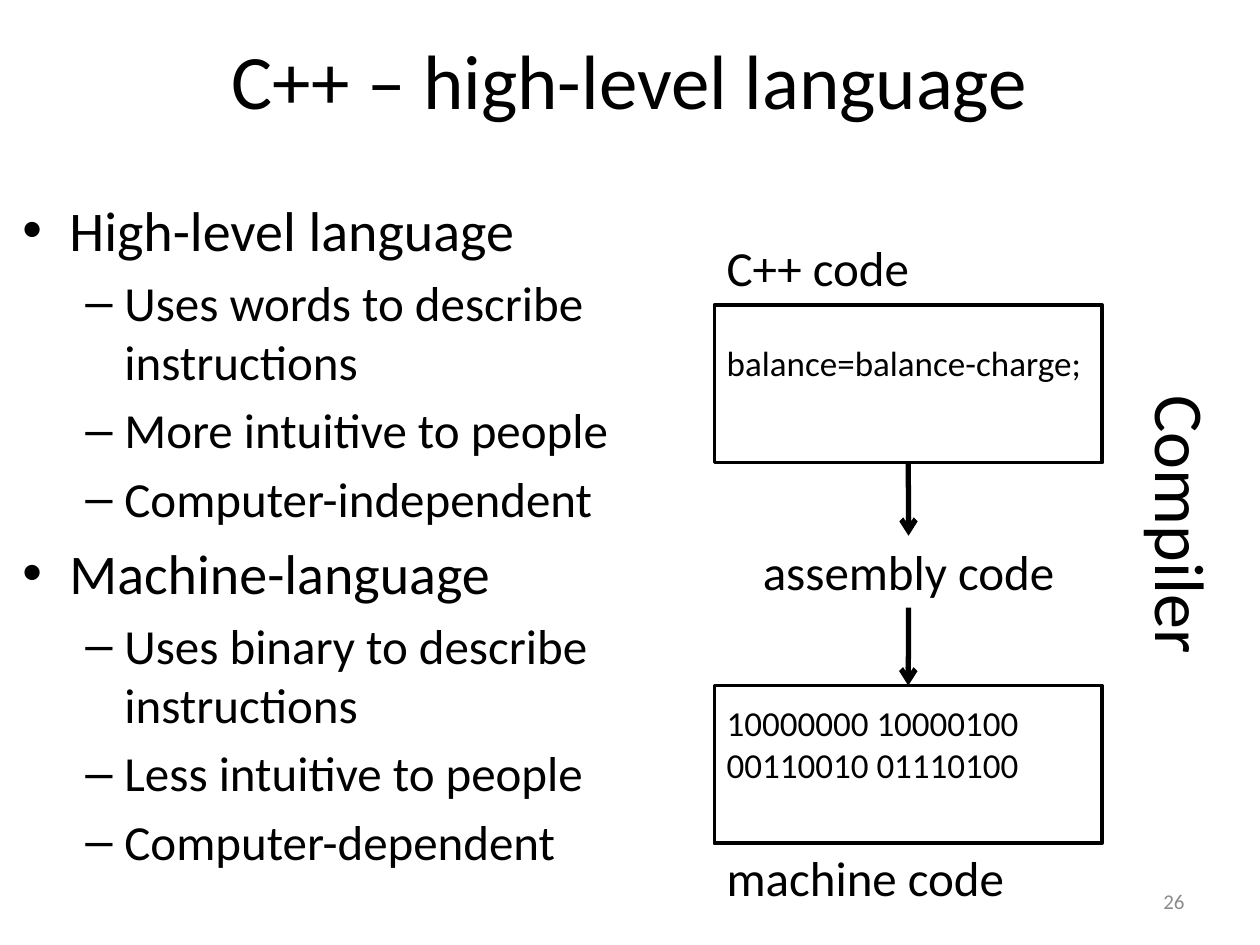
"""Build a slide on C++ as a high-level language and its path to machine code."""
from lxml import etree
from pptx import Presentation
from pptx.dml.color import RGBColor
from pptx.enum import shapes, text
from pptx.oxml import ns
from pptx.util import Cm, Pt

COLOURS = {"ink": "000000", "paper": "FFFFFF", "number": "8C8C8C"}
FONT = "Calibri"
LEFT, CENTRE, RIGHT = text.PP_ALIGN.LEFT, text.PP_ALIGN.CENTER, text.PP_ALIGN.RIGHT
TOP, MIDDLE = text.MSO_ANCHOR.TOP, text.MSO_ANCHOR.MIDDLE


def style(paragraph, size, colour="ink", alignment=LEFT):
    paragraph.alignment = alignment
    paragraph.font.name = FONT
    paragraph.font.size = Pt(size)
    paragraph.font.color.rgb = RGBColor.from_string(COLOURS[colour])


def add_label(words, place, size, alignment=LEFT, anchor=TOP, wrap=False, colour="ink"):
    label = slide.shapes.add_textbox(*map(Cm, place))
    label.text_frame.word_wrap = wrap
    label.text_frame.vertical_anchor = anchor
    label.text_frame.text = words
    style(label.text_frame.paragraphs[0], size, colour, alignment)
    return label


presentation = Presentation()
presentation.slide_width, presentation.slide_height = Cm(25.4), Cm(19.05)
slide = presentation.slides.add_slide(presentation.slide_layouts[6])

add_label("C++ – high-level language", (1.27, 0, 22.86, 3.18), 44, CENTRE, MIDDLE, True)

topics = {
    "High-level language": [
        "Uses words to describe instructions",
        "More intuitive to people",
        "Computer-independent",
    ],
    "Machine-language": [
        "Uses binary to describe instructions",
        "Less intuitive to people",
        "Computer-dependent",
    ],
}
outline = []
for topic, points in topics.items():
    outline.append((topic, 0))
    outline += [(point, 1) for point in points]
levels = [("•", 32, 0.95, -0.95), ("–", 28, 2.06, -0.79)]

body = slide.shapes.add_textbox(Cm(0.2), Cm(3.81), Cm(12.9), Cm(14.17)).text_frame
body.word_wrap = True
for index, (words, level) in enumerate(outline):
    paragraph = body.add_paragraph() if index else body.paragraphs[0]
    bullet, size, margin, indent = levels[level]
    paragraph.text = words
    paragraph.level = level
    style(paragraph, size)
    paragraph.space_before = Pt(size * 0.2)
    properties = paragraph._p.get_or_add_pPr()
    properties.set("marL", str(Cm(margin)))
    properties.set("indent", str(Cm(indent)))
    etree.SubElement(properties, ns.qn("a:buFont")).set("typeface", "Arial")
    etree.SubElement(properties, ns.qn("a:buChar")).set("char", bullet)
    properties.append(properties.find(ns.qn("a:defRPr")))

boxes = []
for code, top in (
    ("balance=balance-charge;", 6.15),
    ("10000000 10000100 00110010 01110100", 13.82),
):
    box = slide.shapes.add_shape(
        shapes.MSO_SHAPE.RECTANGLE, Cm(14.4), Cm(top), Cm(7.82), Cm(3.18)
    )
    box.shadow.inherit = False
    box.fill.solid()
    box.fill.fore_color.rgb = RGBColor.from_string(COLOURS["paper"])
    box.line.color.rgb = RGBColor.from_string(COLOURS["ink"])
    box.line.width = Pt(2)
    box.text_frame.word_wrap = True
    box.text_frame.vertical_anchor = MIDDLE
    box.text_frame.margin_bottom = Cm(0.98)
    box.text_frame.text = code
    style(box.text_frame.paragraphs[0], 20)
    boxes.append(box)

add_label("C++ code", (14.4, 4.67, 4.24, 1.45), 28)
assembly = add_label("assembly code", (15.09, 10.8, 6.45, 1.45), 28, CENTRE)
add_label("machine code", (14.4, 16.97, 6.17, 1.45), 28)
compiler = add_label("Compiler", (20.96, 9.63, 5.77, 1.96), 40)
compiler.rotation = 90

for source, target in ((boxes[0], assembly), (assembly, boxes[1])):
    arrow = slide.shapes.add_connector(shapes.MSO_CONNECTOR.STRAIGHT, 0, 0, 0, 0)
    arrow.begin_connect(source, 2)
    arrow.end_connect(target, 0)
    arrow.line.color.rgb = RGBColor.from_string(COLOURS["ink"])
    arrow.line.width = Pt(3)
    etree.SubElement(arrow.line._get_or_add_ln(), ns.qn("a:tailEnd")).set("type", "arrow")
    etree.SubElement(arrow._element.spPr, ns.qn("a:effectLst"))

add_label("26", (18.21, 17.65, 5.92, 1.02), 12, RIGHT, MIDDLE, True, "number")

presentation.save("out.pptx")
